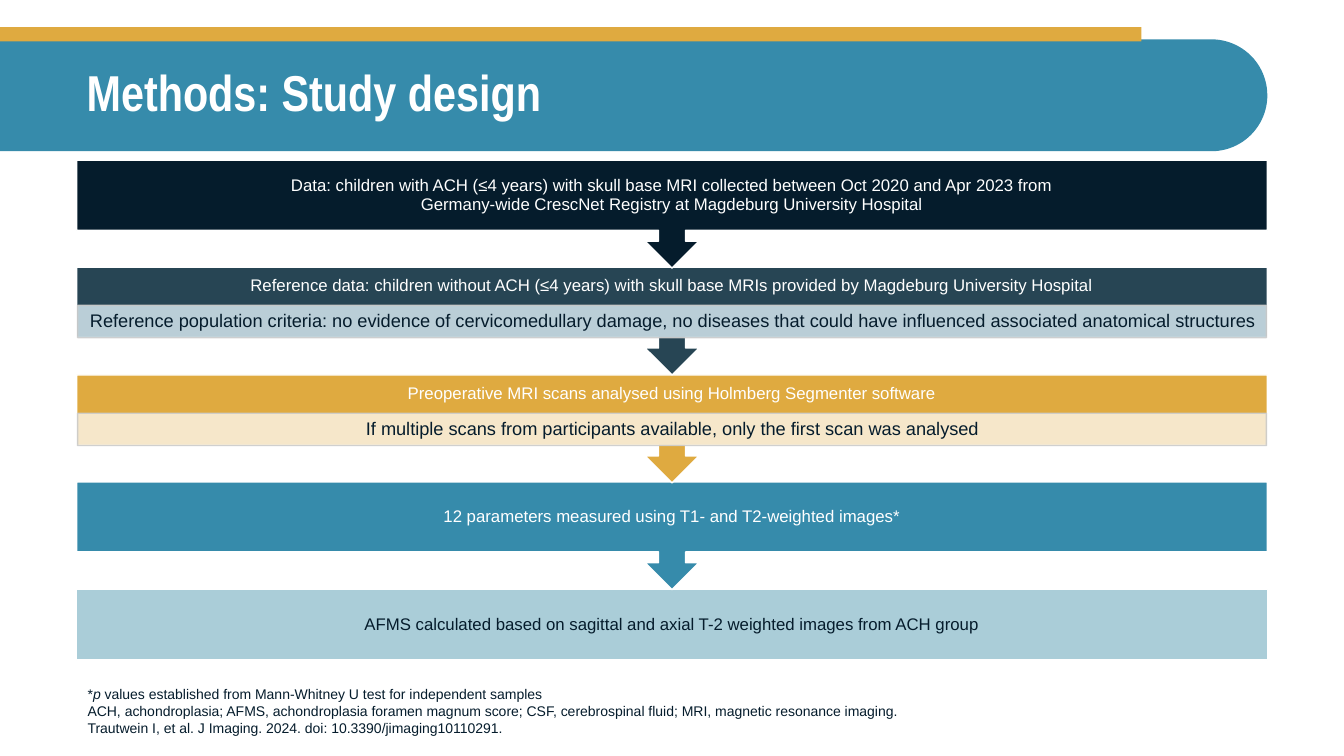
from dataclasses import dataclass

from lxml import etree
from pptx import Presentation
from pptx import util as u
from pptx.dml.color import RGBColor
from pptx.enum import shapes, text
from pptx.oxml.ns import qn

PX = 9144  # EMU per px, 100 px to the inch
COLOURS = {
    "white": "FFFFFF", "navy": "051C2C", "slate": "274554", "gold": "DFAA40",
    "blue": "368BAB", "pale blue": "AACDD8", "mist": "CADDE6",
    "cream": "F9EED9", "grey": "CCCDCD",
}
LEFT, WIDTH = 76, 1181
FIRST_TOP, TWO_STEPS = 159, 213
CALLOUT_HEIGHT, BOX_HEIGHT, HEAD_HEIGHT, DETAIL_HEIGHT = 107, 70, 38, 32


@dataclass
class Box:
    left: int
    top: int
    width: int
    height: int

    def emu(self) -> list[int]:
        return [n * PX for n in (self.left, self.top, self.width, self.height)]


@dataclass
class Step:
    label: str
    fill: str
    ink: str = "white"
    detail: str = ""
    detail_fill: str = ""


STEPS = [
    Step("Data: children with ACH (≤4 years) with skull base MRI collected between "
         "Oct 2020 and Apr 2023 from\n"
         "Germany-wide CrescNet Registry at Magdeburg University Hospital", "navy"),
    Step("Reference data: children without ACH (≤4 years) with skull base MRIs "
         "provided by Magdeburg University Hospital", "slate",
         detail="Reference population criteria: no evidence of cervicomedullary damage, "
                "no diseases that could have influenced associated anatomical structures",
         detail_fill="mist"),
    Step("Preoperative MRI scans analysed using Holmberg Segmenter software", "gold",
         detail="If multiple scans from participants available, only the first scan "
                "was analysed",
         detail_fill="cream"),
    Step("12 parameters measured using T1- and T2-weighted images*", "blue"),
    Step("AFMS calculated based on sagittal and axial T-2 weighted images from ACH group",
         "pale blue", ink="navy"),
]


def rgb(name: str) -> RGBColor:
    return RGBColor.from_string(COLOURS[name])


def apply(target, formats: dict) -> None:
    for key, value in formats.items():
        setattr(target, key, value)


def style_font(font, size: int, ink: str, name: str = "Arial", bold: bool = False) -> None:
    apply(font, {"name": name, "size": u.Pt(size), "bold": bold})
    font.color.rgb = rgb(ink)


def draw_shape(slide, kind, box: Box, fill: str, outline: str = "", rotation: int = 0):
    shape = slide.shapes.add_shape(kind, *box.emu())
    shape.shadow.inherit = False
    shape.rotation = rotation
    shape.fill.solid()
    shape.fill.fore_color.rgb = rgb(fill)
    if outline:
        shape.line.color.rgb = rgb(outline)
        shape.line.width = u.Pt(1)
    else:
        shape.line.fill.background()
    return shape


def make_translucent(shape, percent: int) -> None:
    for colour in shape._element.spPr.iter(qn("a:srgbClr")):
        etree.SubElement(colour, qn("a:alpha"), val=str(percent * 1000))


def write_centred(shape, wording: str, size: int, ink: str, side: int, edge: int) -> None:
    frame = shape.text_frame
    apply(frame, {"word_wrap": True, "vertical_anchor": text.MSO_ANCHOR.MIDDLE,
                  "margin_left": side * PX, "margin_right": side * PX,
                  "margin_top": edge * PX, "margin_bottom": edge * PX})
    line = frame.paragraphs[0]
    line.text = wording
    apply(line, {"alignment": text.PP_ALIGN.CENTER, "line_spacing": 0.9})
    for run in line.runs:
        style_font(run.font, size, ink)


def draw_header(slide) -> None:
    banner = draw_shape(slide, shapes.MSO_SHAPE.ROUND_2_SAME_RECTANGLE,
                        Box(573, -534, 111, 1257), "blue", rotation=270)
    banner.adjustments[0] = 0
    banner.adjustments[1] = 0.5
    draw_shape(slide, shapes.MSO_SHAPE.RECTANGLE, Box(0, 27, 1132, 14), "gold")

    title = slide.shapes.title
    slide.shapes._spTree.append(title._element)  # bring in front of the banner
    apply(title, dict(zip(("left", "top", "width", "height"),
                          Box(LEFT, 39, WIDTH, 110).emu())))
    title.text = "Methods: Study design"
    apply(title.text_frame, {"word_wrap": True, "auto_size": text.MSO_AUTO_SIZE.NONE,
                             "vertical_anchor": text.MSO_ANCHOR.MIDDLE})
    heading = title.text_frame.paragraphs[0]
    apply(heading, {"alignment": text.PP_ALIGN.LEFT, "line_spacing": 0.9})
    style_font(heading.runs[0].font, 36, "white", "Arial Narrow", bold=True)


def draw_step(slide, step: Step, top: int, last: bool) -> None:
    if last:
        label = draw_shape(slide, shapes.MSO_SHAPE.RECTANGLE,
                           Box(LEFT, top, WIDTH, BOX_HEIGHT), step.fill, "white")
    else:
        draw_shape(slide, shapes.MSO_SHAPE.UP_ARROW_CALLOUT,
                   Box(LEFT, top, WIDTH, CALLOUT_HEIGHT), step.fill, "white", rotation=180)
        height = HEAD_HEIGHT if step.detail else BOX_HEIGHT
        label = slide.shapes.add_textbox(*Box(LEFT, top, WIDTH, height).emu())
    write_centred(label, step.label, 12, step.ink, side=9, edge=9)
    if step.detail:
        detail = draw_shape(slide, shapes.MSO_SHAPE.RECTANGLE,
                            Box(LEFT + 1, top + HEAD_HEIGHT, WIDTH - 2, DETAIL_HEIGHT),
                            step.detail_fill, "grey")
        make_translucent(detail, 90)
        write_centred(detail, step.detail, 13, "navy", side=10, edge=2)


def draw_footnote(slide) -> None:
    frame = slide.shapes.add_textbox(*Box(77, 671, 988, 64).emu()).text_frame
    apply(frame, {"word_wrap": True, "vertical_anchor": text.MSO_ANCHOR.BOTTOM})
    note = frame.paragraphs[0]
    for wording, italic in (
            ("*", False), ("p ", True),
            ("values established from Mann-Whitney U test for independent samples", False)):
        run = note.add_run()
        run.text = wording
        run.font.italic = italic
    sources = frame.add_paragraph()
    sources.text = ("ACH, achondroplasia; AFMS, achondroplasia foramen magnum score; "
                    "CSF, cerebrospinal fluid; MRI, magnetic resonance imaging.\n"
                    "Trautwein I, et al. J Imaging. 2024. doi: 10.3390/jimaging10110291.")
    for run in (*note.runs, *sources.runs):
        style_font(run.font, 10, "navy")


def main() -> None:
    deck = Presentation()
    apply(deck, {"slide_width": 1333 * PX, "slide_height": 750 * PX})
    slide = deck.slides.add_slide(deck.slide_layouts[5])
    draw_header(slide)
    # Flow from the last step up, so each arrow lies over the step below
    for i, step in reversed(list(enumerate(STEPS))):
        draw_step(slide, step, FIRST_TOP + TWO_STEPS * i // 2, i == len(STEPS) - 1)
    draw_footnote(slide)
    deck.save("out.pptx")


if __name__ == "__main__":
    main()
